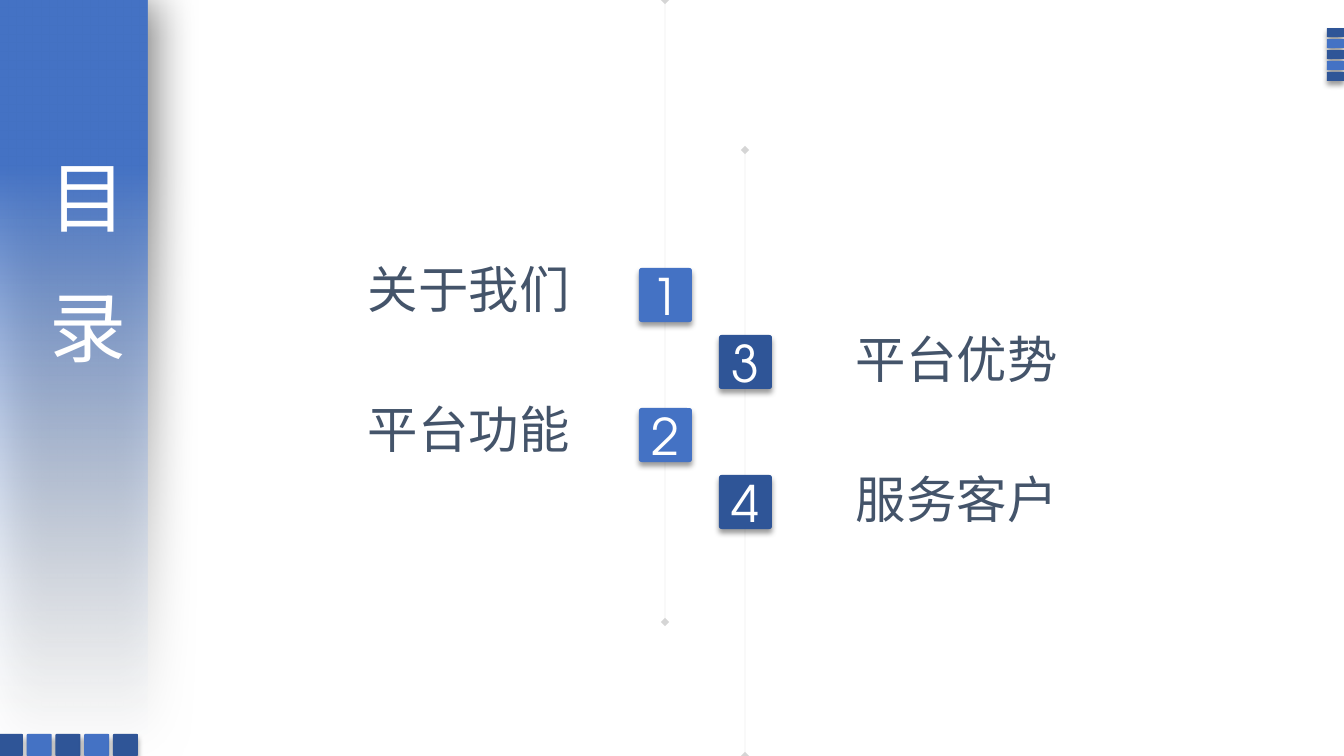
from lxml.etree import SubElement
from pptx import Presentation
from pptx.dml.color import RGBColor
from pptx.enum.shapes import MSO_CONNECTOR, MSO_SHAPE
from pptx.enum.text import MSO_ANCHOR, MSO_AUTO_SIZE, PP_ALIGN
from pptx.oxml.ns import qn
from pptx.util import Pt

COLORS = {"blue": "4472C4", "dark": "2F5597", "pale": "F7FAFD", "line": "808080",
          "label": "44546A", "white": "FFFFFF", "shadow": "000000"}
CJK, DIGITS = "Noto Sans CJK SC", "TeX Gyre Adventor"
TITLE = "目录"

# Left column, then right column: items, badge colour, axis (x, top, bottom)
COLUMNS = [
    {"items": [("1", "关于我们"), ("2", "平台功能")], "color": "blue",
     "axis": (665, 0, 622), "label_x": 358, "label_y": 253, "badge_y": 268},
    {"items": [("3", "平台优势"), ("4", "服务客户")], "color": "dark",
     "axis": (745, 150, 756), "label_x": 846, "label_y": 323, "badge_y": 335},
]
ROW_STEP = 140
BADGE_W, BADGE_H = 53, 54
TILE_COLORS = ["dark", "blue", "dark", "blue", "dark"]


def px(n):
    return round(n * 914400 / 100.8)


def rgb(name):
    return RGBColor.from_string(COLORS[name])


def add_alpha(parent, percent):
    """Set the opacity of the RGB colour found inside parent."""
    color = next(parent.iter(qn("a:srgbClr")))
    SubElement(color, qn("a:alpha"), val=str(percent * 1000))


def add_shadow(sp, opacity, blur, dist, angle):
    sp.shadow.inherit = False
    effects = sp._element.spPr.find(qn("a:effectLst"))
    shadow = SubElement(effects, qn("a:outerShdw"), blurRad=str(Pt(blur)),
                        dist=str(Pt(dist)), dir=str(angle * 60000),
                        algn="ctr", rotWithShape="0")
    SubElement(shadow, qn("a:srgbClr"), val=COLORS["shadow"])
    add_alpha(shadow, opacity)


def add_tile(s, x, y, w, h, color):
    sp = s.shapes.add_shape(MSO_SHAPE.ROUNDED_RECTANGLE, px(x), px(y), px(w), px(h))
    sp.adjustments[0] = 0.05
    sp.fill.solid()
    sp.fill.fore_color.rgb = rgb(color)
    sp.line.fill.background()
    add_shadow(sp, 40, 4, 3, 90)
    return sp


def set_text(sp, text, size, font, color):
    p = sp.text_frame.paragraphs[0]
    p.text = text
    r = p.runs[0]
    r.font.size = Pt(size)
    r.font.name = font
    r.font.color.rgb = rgb(color)
    SubElement(r._r.get_or_add_rPr(), qn("a:ea"), typeface=CJK)
    return r


def add_axis(s, x, top, bottom):
    line = s.shapes.add_connector(MSO_CONNECTOR.STRAIGHT, px(x), px(top), px(x), px(bottom))
    line.line.color.rgb = rgb("line")
    line.line.width = Pt(0.25)
    ln = line.line._get_or_add_ln()
    add_alpha(ln, 33)
    for end in ("a:headEnd", "a:tailEnd"):
        SubElement(ln, qn(end), type="diamond")
    SubElement(line._element.spPr, qn("a:effectLst"))


def add_band(s):
    sp = s.shapes.add_shape(MSO_SHAPE.RECTANGLE, 0, 0, px(148), px(752))
    sp.fill.gradient()
    sp.fill.gradient_angle = 270
    for stop, color, position in zip(sp.fill.gradient_stops, ("blue", "pale"), (0.22, 1)):
        stop.color.rgb = rgb(color)
        stop.position = position
    add_alpha(sp._element.spPr.findall(".//" + qn("a:gs"))[-1], 0)
    sp.line.fill.background()
    add_shadow(sp, 50, 31, 6, 7)


def add_title(s):
    sp = s.shapes.add_textbox(px(22), px(149), px(114), px(376))
    sp.text_frame.word_wrap = True
    sp.text_frame._txBody.bodyPr.set("vert", "eaVert")
    r = set_text(sp, TITLE, 55, "Arial", "white")
    r._r.get_or_add_rPr().set("spc", "3800")


def add_badge(s, x, y, number, color):
    sp = add_tile(s, x, y, BADGE_W, BADGE_H, color)
    sp.text_frame.vertical_anchor = MSO_ANCHOR.MIDDLE
    set_text(sp, number, 36, DIGITS, "white")
    sp.text_frame.paragraphs[0].alignment = PP_ALIGN.CENTER


def add_label(s, x, y, text):
    sp = s.shapes.add_textbox(px(x), px(y), px(224), px(72))
    sp.text_frame.word_wrap = False
    sp.text_frame.auto_size = MSO_AUTO_SIZE.SHAPE_TO_FIT_TEXT
    set_text(sp, text, 36, CJK, "label")


def main():
    prs = Presentation()
    prs.slide_width, prs.slide_height = px(1344), px(756)
    s = prs.slides.add_slide(prs.slide_layouts[6])

    for column in reversed(COLUMNS):
        add_axis(s, *column["axis"])
    add_band(s)
    for i, color in enumerate(TILE_COLORS):
        add_tile(s, -2 + i * 28.75, 734, 25, 22, color)
        add_tile(s, 1327, 28 + i * 11, 17, 9, color)
    add_title(s)
    for column in COLUMNS:
        badge_x = column["axis"][0] - BADGE_W // 2
        for row, (number, label) in enumerate(column["items"]):
            add_badge(s, badge_x, column["badge_y"] + row * ROW_STEP, number, column["color"])
            add_label(s, column["label_x"], column["label_y"] + row * ROW_STEP, label)
    prs.save("out.pptx")


if __name__ == "__main__":
    main()
